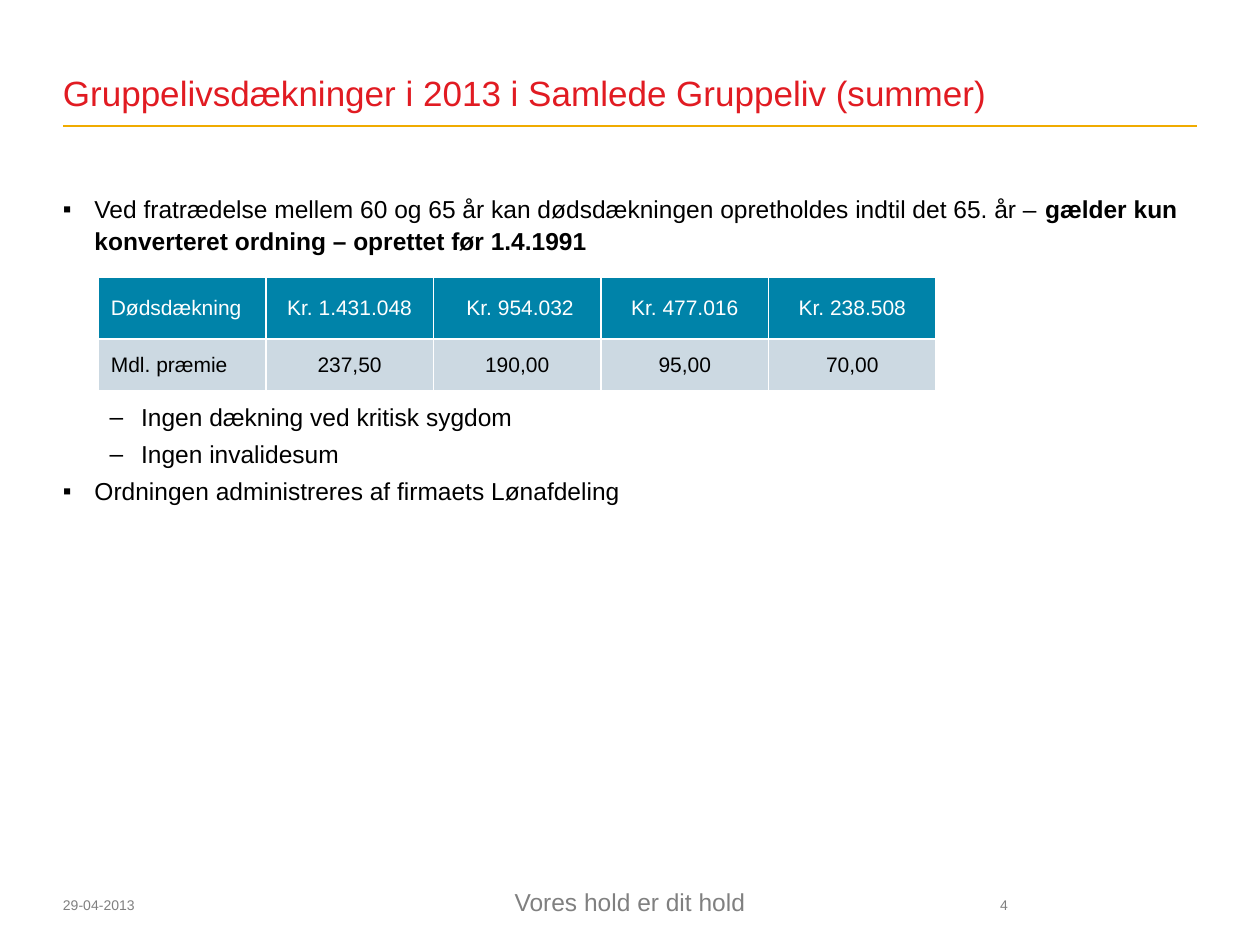
import pptx
import pptx.util
import pptx.dml.color
import pptx.enum.shapes
import pptx.enum.text
import pptx.oxml
import pptx.oxml.ns
from lxml import etree

Inches, Pt = pptx.util.Inches, pptx.util.Pt
RGBColor = pptx.dml.color.RGBColor
ALIGN = pptx.enum.text.PP_ALIGN
ANCHOR = pptx.enum.text.MSO_ANCHOR
qn = pptx.oxml.ns.qn

RED = RGBColor(0xE1, 0x1B, 0x22)
GOLD = RGBColor(0xF0, 0xAB, 0x00)
GREY = RGBColor(0x80, 0x80, 0x80)
BLACK = RGBColor(0x00, 0x00, 0x00)
WHITE = RGBColor(0xFF, 0xFF, 0xFF)
TEAL = RGBColor(0x00, 0x83, 0xA9)
PALE = RGBColor(0xCC, 0xD9, 0xE2)

prs = pptx.Presentation()
prs.slide_width, prs.slide_height = Inches(10), Inches(7.5)
slide = prs.slides.add_slide(prs.slide_layouts[6])


def style(para, size, color, align=ALIGN.LEFT):
    para.alignment = align
    for run in para.runs:
        run.font.name = "Arial"
        run.font.size = Pt(size)
        run.font.color.rgb = color


def add_box(left, top, width, height, anchor=ANCHOR.TOP, wrap=True):
    shape = slide.shapes.add_textbox(
        Inches(left), Inches(top), Inches(width), Inches(height))
    frame = shape.text_frame
    frame.margin_left = frame.margin_right = 0
    frame.margin_top = frame.margin_bottom = 0
    frame.vertical_anchor = anchor
    frame.word_wrap = wrap
    return frame


# Rule under the title
rule = slide.shapes.add_connector(
    pptx.enum.shapes.MSO_CONNECTOR.STRAIGHT,
    Inches(0.5), Inches(1), Inches(9.5), Inches(1))
rule.line.color.rgb = GOLD
rule.line.width = Pt(0.75)
etree.SubElement(rule._element.spPr, qn("a:effectLst"))

# Title and footer: text, box, size, colour, alignment, anchor, wrap
labels = [
    ("Gruppelivsdækninger i 2013 i Samlede Gruppeliv (summer)",
     (0.5, 0.33, 9, 0.57), 20, RED, ALIGN.LEFT, ANCHOR.BOTTOM, True),
    ("29-04-2013", (0.5, 6.92, 0.9, 0.33),
     8, GREY, ALIGN.LEFT, ANCHOR.BOTTOM, False),
    ("Vores hold er dit hold", (3.98, 7.04, 2.04, 0.24),
     14, GREY, ALIGN.CENTER, ANCHOR.TOP, False),
    ("4", (7.68, 6.92, 0.32, 0.33),
     8, GREY, ALIGN.RIGHT, ANCHOR.BOTTOM, False),
]
for text, place, size, color, align, anchor, wrap in labels:
    frame = add_box(*place, anchor, wrap)
    frame.text = text
    style(frame.paragraphs[0], size, color, align)

# Bullets above and below the table: level and runs, every second run bold
above = [
    (0, ["Ved fratrædelse mellem 60 og 65 år kan dødsdækningen "
         "opretholdes indtil det 65. år – ",
         "gælder kun konverteret ordning – oprettet før 1.4.1991"]),
]
below = [
    (1, ["Ingen dækning ved kritisk sygdom"]),
    (1, ["Ingen invalidesum"]),
    (0, ["Ordningen administreres af firmaets Lønafdeling"]),
]
marks = [("▪", 0.25), ("–", 0.62)]
for top, height, items in [(1.53, 0.5, above), (3.18, 0.85, below)]:
    frame = add_box(0.5, top, 9, height)
    for i, (level, parts) in enumerate(items):
        para = frame.add_paragraph() if i else frame.paragraphs[0]
        mark, indent = marks[level]
        props = para._p.get_or_add_pPr()
        props.set("marL", str(Inches(indent)))
        props.set("indent", str(Inches(-0.25)))
        etree.SubElement(props, qn("a:buFont")).set("typeface", "Arial")
        etree.SubElement(props, qn("a:buChar")).set("char", mark)
        para.level = level
        para.line_spacing = 1.06
        if i:
            para.space_before = Pt(3.2)
        for j, part in enumerate(parts):
            run = para.add_run()
            run.text = part
            run.font.bold = j == 1
        style(para, 14, BLACK)

# Table of cover and premium
rows = [
    ["Dødsdækning", "Kr. 1.431.048", " Kr. 954.032",
     "Kr. 477.016", "Kr. 238.508"],
    ["Mdl. præmie", "237,50", "190,00", "95,00", "70,00"],
]
looks = [(0.49, TEAL, WHITE), (0.41, PALE, BLACK)]
table = slide.shapes.add_table(
    2, 5, Inches(0.78), Inches(2.2), Inches(6.67), Inches(0.9)).table
for col in table.columns:
    col.width = Inches(1.33)
for r, (height, fill, color) in enumerate(looks):
    table.rows[r].height = Inches(height)
    for c, text in enumerate(rows[r]):
        cell = table.cell(r, c)
        cell.text = text
        cell.vertical_anchor = ANCHOR.MIDDLE
        style(cell.text_frame.paragraphs[0], 12, color,
              ALIGN.CENTER if c else ALIGN.LEFT)
        cell.text_frame.paragraphs[0].runs[0].font.bold = False
        # White borders come before the fill
        props = cell._tc.get_or_add_tcPr()
        for side in ("lnL", "lnR", "lnT", "lnB"):
            edge = etree.SubElement(props, qn("a:" + side))
            edge.set("w", str(Pt(1)))
            paint = etree.SubElement(edge, qn("a:solidFill"))
            etree.SubElement(paint, qn("a:srgbClr")).set("val", str(WHITE))
        cell.fill.solid()
        cell.fill.fore_color.rgb = fill

prs.save("out.pptx")
